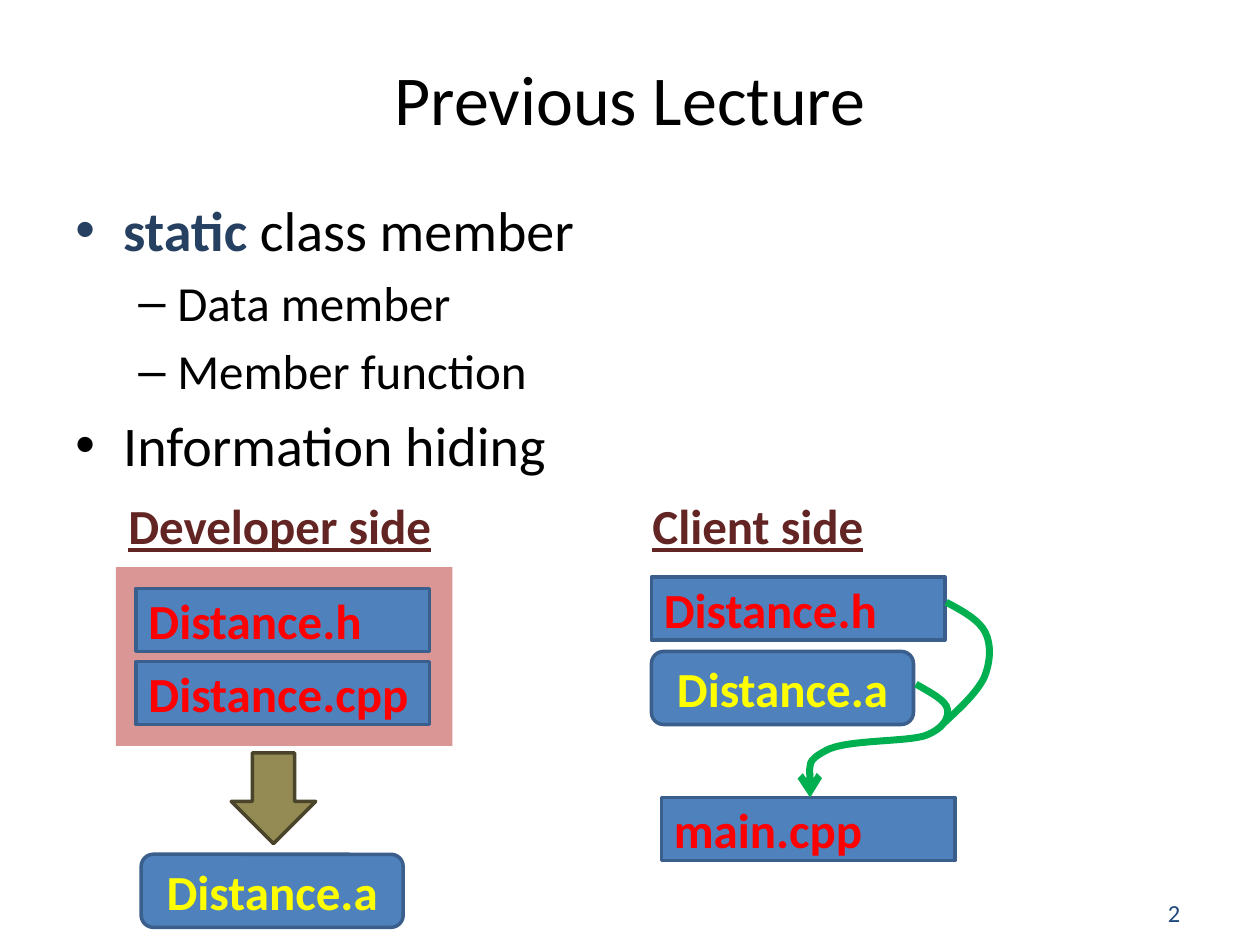
from dataclasses import dataclass

from lxml import etree
from pptx import Presentation
from pptx.dml.color import RGBColor
from pptx.enum.shapes import MSO_SHAPE
from pptx.enum.text import MSO_ANCHOR, PP_ALIGN
from pptx.oxml.ns import qn
from pptx.util import Inches, Pt

RECT = MSO_SHAPE.RECTANGLE
ROUNDED = MSO_SHAPE.ROUNDED_RECTANGLE
ARROW = MSO_SHAPE.RIGHT_ARROW
LEFT, CENTER = PP_ALIGN.LEFT, PP_ALIGN.CENTER
TOP, MIDDLE = MSO_ANCHOR.TOP, MSO_ANCHOR.MIDDLE

BLACK = RGBColor(0x00, 0x00, 0x00)
NAVY = RGBColor(0x25, 0x40, 0x61)
NUMBER_BLUE = RGBColor(0x1F, 0x49, 0x7D)
BLUE = RGBColor(0x4F, 0x81, 0xBD)
BLUE_EDGE = RGBColor(0x3A, 0x5F, 0x8C)
PINK = RGBColor(0xD9, 0x96, 0x94)
OLIVE = RGBColor(0x94, 0x8A, 0x54)
OLIVE_EDGE = RGBColor(0x4A, 0x45, 0x2A)
MAROON = RGBColor(0x63, 0x25, 0x23)
RED = RGBColor(0xFF, 0x00, 0x00)
YELLOW = RGBColor(0xFF, 0xFF, 0x00)
GREEN = RGBColor(0x00, 0xB0, 0x50)

SOURCE_FORMAT = {"size": Pt(28), "bold": True}
HEADING_FORMAT = {"size": Pt(28), "bold": True, "underline": True}


@dataclass
class FileBox:
    name: str
    left: float
    top: float
    library: bool = False


@dataclass
class Label:
    text: str
    area: tuple
    color: RGBColor
    formats: dict
    align: PP_ALIGN = LEFT


@dataclass
class Bullet:
    spans: list
    level: int = 0


@dataclass
class Curve:
    points: list  # start point, then three points for each Bezier segment
    arrow: bool = False


DEVELOPER_SOURCES = [
    FileBox("Distance.h", 1.08, 4.67),
    FileBox("Distance.cpp", 1.08, 5.25),
]
OTHER_FILES = [
    FileBox("Distance.a", 1.12, 6.78, library=True),
    FileBox("Distance.a", 5.17, 5.17, library=True),
    FileBox("Distance.h", 5.17, 4.58),
    FileBox("main.cpp", 5.25, 6.33),
]
LABELS = [
    Label("2", (9.17, 7.08, 0.67, 0.33), NUMBER_BLUE, {"size": Pt(14)}),
    Label("Previous Lecture", (0.5, 0.38, 9, 0.78), BLACK, {"size": Pt(40)}, CENTER),
    Label("Developer side", (0.92, 3.92, 2.67, 0.5), MAROON, HEADING_FORMAT),
    Label("Client side", (5.08, 3.92, 2.67, 0.5), MAROON, HEADING_FORMAT),
]
BULLETS = [
    Bullet([("static", NAVY, True), (" class member", BLACK, False)]),
    Bullet([("Data member", BLACK, False)], level=1),
    Bullet([("Member function", BLACK, False)], level=1),
    Bullet([("Information hiding", BLACK, False)]),
]
# Per level: text size, left margin, hanging indent, bullet character
BULLET_LEVELS = [(32, 0.38, 0.38, "•"), (28, 0.81, 0.31, "–")]
CURVES = [
    Curve([(7.27, 5.43), (7.39, 5.5), (7.51, 5.56), (7.52, 5.63),
           (7.53, 5.69), (7.5, 5.78), (7.34, 5.84),
           (7.18, 5.89), (6.7, 5.87), (6.55, 5.96),
           (6.4, 6.04), (6.42, 6.18), (6.43, 6.33)], arrow=True),
    Curve([(7.51, 4.78), (7.64, 4.85), (7.77, 4.92), (7.82, 5.02),
           (7.87, 5.12), (7.86, 5.26), (7.81, 5.38),
           (7.75, 5.5), (7.62, 5.62), (7.49, 5.74)]),
]


def add_span(para, text: str, color: RGBColor, formats: dict) -> None:
    span = para.add_run()
    span.text = text
    span.font.color.rgb = color
    for key, value in ({"name": "Calibri"} | formats).items():
        setattr(span.font, key, value)


def add_text_box(shapes, area: tuple, anchor: MSO_ANCHOR):
    frame = shapes.add_textbox(*map(Inches, area)).text_frame
    frame.word_wrap = True
    frame.vertical_anchor = anchor
    return frame


def add_label(shapes, label: Label) -> None:
    para = add_text_box(shapes, label.area, MIDDLE).paragraphs[0]
    para.alignment = label.align
    add_span(para, label.text, label.color, label.formats)


def add_bullets(shapes, bullets: list) -> None:
    frame = add_text_box(shapes, (0.5, 1.5, 9, 5.2), TOP)
    for index, bullet in enumerate(bullets):
        para = frame.add_paragraph() if index else frame.paragraphs[0]
        size, margin, hanging, character = BULLET_LEVELS[bullet.level]
        para.level = bullet.level
        para.space_before = Pt(0.2 * size)
        for text, color, bold in bullet.spans:
            add_span(para, text, color, {"size": Pt(size), "bold": bold})
        properties = para._p.get_or_add_pPr()
        properties.set("marL", str(Inches(margin)))
        properties.set("indent", str(-Inches(hanging)))
        etree.SubElement(properties, qn("a:buFont"), typeface="Arial")
        etree.SubElement(properties, qn("a:buChar"), char=character)


def add_block(shapes, kind: MSO_SHAPE, area: tuple, fill: RGBColor,
              edge: RGBColor | None = None):
    box = shapes.add_shape(kind, *map(Inches, area))
    box.shadow.inherit = False
    box.fill.solid()
    box.fill.fore_color.rgb = fill
    if edge is None:
        box.line.fill.background()
    else:
        box.line.color.rgb = edge
        box.line.width = Pt(2)
    return box


def add_file(shapes, file: FileBox) -> None:
    kind, width, height, color, align = (
        (ROUNDED, 2.08, 0.58, YELLOW, CENTER) if file.library
        else (RECT, 2.33, 0.5, RED, LEFT))
    box = add_block(shapes, kind, (file.left, file.top, width, height), BLUE, BLUE_EDGE)
    box.text_frame.vertical_anchor = MIDDLE
    para = box.text_frame.paragraphs[0]
    para.alignment = align
    add_span(para, file.name, color, SOURCE_FORMAT)


def add_curve(shapes, curve: Curve) -> None:
    start, *others = [(Inches(x), Inches(y)) for x, y in curve.points]
    builder = shapes.build_freeform(*start)
    builder.add_line_segments(others, close=False)
    shape = builder.convert_to_shape()
    shape.shadow.inherit = False
    shape.fill.background()
    shape.line.color.rgb = GREEN
    shape.line.width = Pt(4)
    # Turn each three straight segments into one Bezier segment
    outline = shape._element.spPr.find(".//" + qn("a:path"))
    segments = outline.findall(qn("a:lnTo"))
    for first in range(0, len(segments), 3):
        bezier = etree.SubElement(outline, qn("a:cubicBezTo"))
        for segment in segments[first:first + 3]:
            bezier.append(segment[0])
            outline.remove(segment)
    if curve.arrow:
        etree.SubElement(shape.line._get_or_add_ln(), qn("a:tailEnd"), type="arrow")


def main() -> None:
    deck = Presentation()
    deck.slide_width, deck.slide_height = Inches(10), Inches(7.5)
    page = deck.slides.add_slide(deck.slide_layouts[6])

    # Title, page number, headings and bullet list
    for label in LABELS:
        add_label(page.shapes, label)
    add_bullets(page.shapes, BULLETS)

    # Developer sources, compiled into the library
    panel = page.shapes.add_group_shape().shapes
    add_block(panel, RECT, (0.92, 4.5, 2.67, 1.42), PINK)
    for file in DEVELOPER_SOURCES:
        add_file(panel, file)
    arrow = add_block(page.shapes, ARROW, (1.81, 6, 0.72, 0.67), OLIVE, OLIVE_EDGE)
    arrow.rotation = 90

    # Library and client files, joined by curves
    for file in OTHER_FILES:
        add_file(page.shapes, file)
    links = page.shapes.add_group_shape().shapes
    for curve in CURVES:
        add_curve(links, curve)

    deck.save("out.pptx")


if __name__ == "__main__":
    main()
